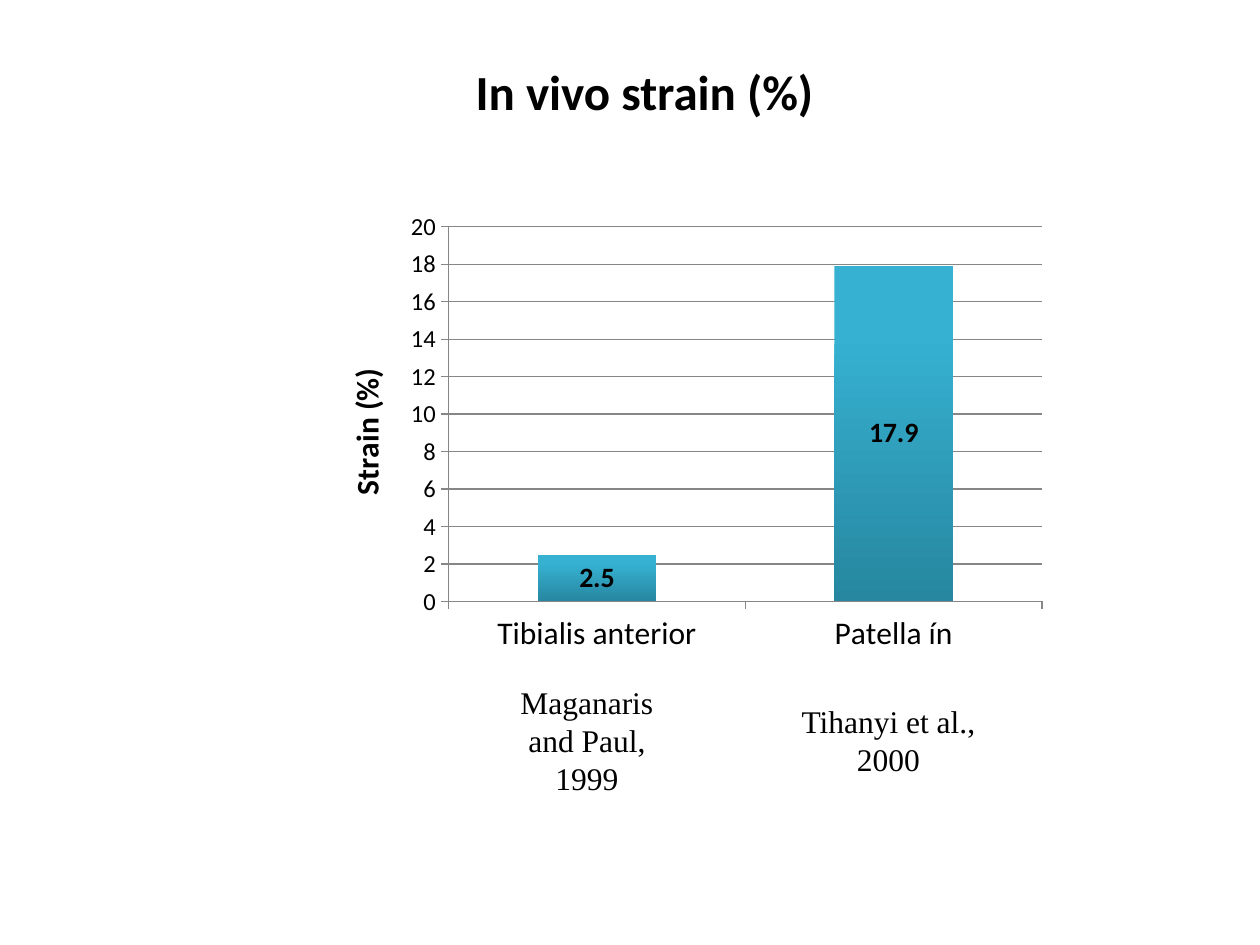
from lxml import etree
from pptx import Presentation
from pptx.chart.data import CategoryChartData
from pptx.dml.color import RGBColor
from pptx.enum.chart import XL_CHART_TYPE, XL_LABEL_POSITION, XL_TICK_MARK
from pptx.enum.text import PP_ALIGN
from pptx.oxml import parse_xml
from pptx.oxml.ns import nsdecls
from pptx.util import Pt

PX = 914400 // 126
COLUMN = XL_CHART_TYPE.COLUMN_CLUSTERED
CENTER_LABEL = XL_LABEL_POSITION.CENTER
TICK_OUT = XL_TICK_MARK.OUTSIDE
CENTER = PP_ALIGN.CENTER
BLACK = RGBColor(0x00, 0x00, 0x00)
GRAY = RGBColor(0x86, 0x86, 0x86)
BAR_TOP = RGBColor(0x36, 0xB1, 0xD2)
BAR_BOTTOM = RGBColor(0x27, 0x87, 0xA0)


def style(font, size, bold=False, name="Calibri"):
    font.size = Pt(size)
    font.bold = bold
    font.name = name
    font.color.rgb = BLACK


prs = Presentation()
prs.slide_width = 1260 * PX
prs.slide_height = 945 * PX
s = prs.slides.add_slide(prs.slide_layouts[6])

# Strain chart
data = CategoryChartData()
data.categories = ["Tibialis anterior", "Patella ín"]
data.add_series("Series 1", [2.5, 17.9])
chart = s.shapes.add_chart(COLUMN, 315 * PX, 204 * PX, 742 * PX, 457 * PX, data).chart
chart.has_legend = False
chart.has_title = False
style(chart.font, 10)

# Axes
cat_axis, val_axis = chart.category_axis, chart.value_axis
for axis, size in ((cat_axis, 18), (val_axis, 14)):
    axis.major_tick_mark = TICK_OUT
    axis.format.line.color.rgb = GRAY
    style(axis.tick_labels.font, size)
val_axis.minimum_scale = 0
val_axis.maximum_scale = 20
val_axis.major_unit = 2
val_axis.has_major_gridlines = True
val_axis.major_gridlines.format.line.color.rgb = GRAY
p = val_axis.axis_title.text_frame.paragraphs[0]
p.text = "Strain (%)"
style(p.font, 18, bold=True)

# Columns and their labels
plot = chart.plots[0]
plot.gap_width = 150
plot.vary_by_categories = False
fill = plot.series[0].format.fill
fill.gradient()
fill.gradient_angle = 270
for stop, color in zip(fill.gradient_stops, (BAR_TOP, BAR_BOTTOM)):
    stop.color.rgb = color
fill.gradient_stops[0].position = 0.2
fill.gradient_stops[1].position = 1
labels = plot.series[0].data_labels
labels.show_value = True
labels.position = CENTER_LABEL
style(labels.font, 16, bold=True)

# Fixed plot area, as fractions of the chart
layout = parse_xml(f"<c:layout {nsdecls('c')}/>")
manual = etree.SubElement(layout, layout.tag.replace("layout", "manualLayout"))
for tag, val in (("layoutTarget", "inner"), ("xMode", "edge"), ("yMode", "edge"),
                 ("x", "0.18"), ("y", "0.05"), ("w", "0.8"), ("h", "0.82")):
    etree.SubElement(manual, layout.tag.replace("layout", tag)).set("val", val)
plot_area = chart._chartSpace.chart.plotArea
for old in plot_area.findall(layout.tag):
    plot_area.remove(old)
plot_area.insert(0, layout)

# Title and citations
for text, x, y, w, h, size, bold, name in (
    ("In vivo strain (%)", 94, 55, 1101, 72, 28, True, "Calibri"),
    ("Maganaris and Paul, 1999", 485, 677, 204, 127, 18, False, "Times New Roman"),
    ("Tihanyi et al., 2000", 789, 696, 199, 89, 18, False, "Times New Roman"),
):
    tf = s.shapes.add_textbox(x * PX, y * PX, w * PX, h * PX).text_frame
    tf.word_wrap = True
    p = tf.paragraphs[0]
    p.text = text
    p.alignment = CENTER
    style(p.font, size, bold, name)

prs.save("out.pptx")
